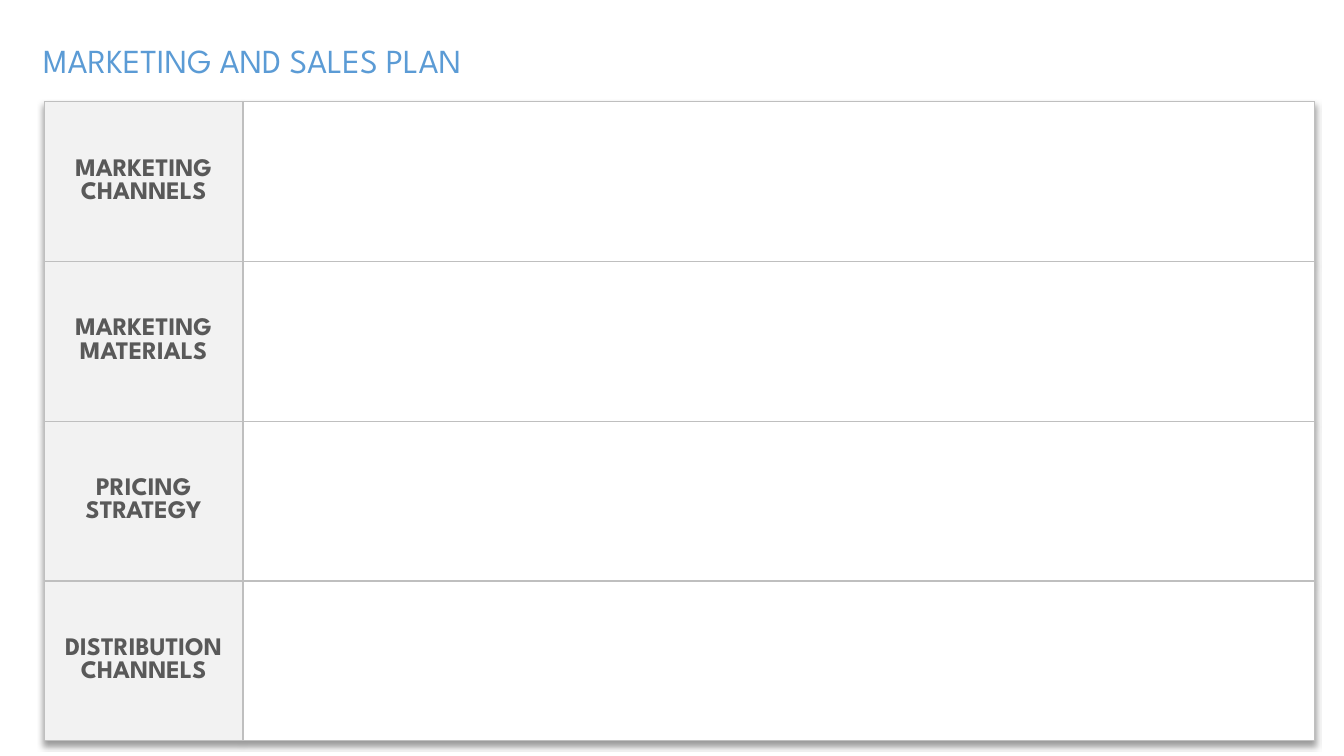
from dataclasses import dataclass

from pptx import Presentation
from pptx.dml.color import RGBColor as RGB
from pptx.enum.text import MSO_ANCHOR as Anchor, PP_ALIGN as Align
from pptx.oxml import parse_xml
from pptx.oxml.ns import nsdecls
from pptx.slide import Slide
from pptx.table import _Cell as Cell
from pptx.text.text import _Paragraph as Paragraph
from pptx.util import Inches, Pt


@dataclass(frozen=True)
class Theme:
    """Colours, font and sizes of the slide."""
    font: str = "League Spartan"
    title: str = "5B9BD5"
    label: str = "595959"
    label_fill: str = "F2F2F2"
    body_fill: str = "FFFFFF"
    border: str = "BFBFBF"
    title_size: int = 24
    label_size: int = 18
    border_width: int = 1


@dataclass(frozen=True)
class PlanRow:
    """One row of the plan."""
    label: str
    detail: str = ""


THEME = Theme()
ROWS = [
    PlanRow("MARKETING CHANNELS"),
    PlanRow("MARKETING MATERIALS"),
    PlanRow("PRICING STRATEGY"),
    PlanRow("DISTRIBUTION CHANNELS"),
]
LABEL_WIDTH, DETAIL_WIDTH, TABLE_HEIGHT = 1.97, 10.63, 6.34


def style_text(p: Paragraph, size: int, color: str, bold: bool = False) -> None:
    """Format every run of a paragraph."""
    for r in p.runs:
        r.font.name = THEME.font
        r.font.size = Pt(size)
        r.font.bold = bold
        r.font.color.rgb = RGB.from_string(color)


def add_title(s: Slide, text: str) -> None:
    """Add the slide title."""
    tf = s.shapes.add_textbox(Inches(0.33), Inches(0.35), Inches(8.08), Inches(0.5)).text_frame
    tf.word_wrap = True
    tf.text = text
    style_text(tf.paragraphs[0], THEME.title_size, THEME.title)


def style_cell(cell: Cell, fill: str) -> None:
    """Fill a cell and outline its four sides."""
    cell.fill.solid()
    cell.fill.fore_color.rgb = RGB.from_string(fill)
    cell.vertical_anchor = Anchor.MIDDLE
    tc_pr = cell._tc.get_or_add_tcPr()
    for i, side in enumerate(("lnL", "lnR", "lnT", "lnB")):
        tc_pr.insert(i, parse_xml(
            f'<a:{side} {nsdecls("a")} w="{Pt(THEME.border_width)}"><a:solidFill>'
            f'<a:srgbClr val="{THEME.border}"/></a:solidFill></a:{side}>'))


def add_plan_table(s: Slide, rows: list[PlanRow]) -> None:
    """Add the plan table with its drop shadow."""
    table = s.shapes.add_table(
        len(rows), 2, Inches(0.44), Inches(1.01),
        Inches(LABEL_WIDTH + DETAIL_WIDTH), Inches(TABLE_HEIGHT)).table
    table.first_row = table.horz_banding = False
    table._tbl.tblPr.insert(0, parse_xml(
        f'<a:effectLst {nsdecls("a")}><a:outerShdw blurRad="50800" dist="38100" '
        'dir="5400000" algn="t" rotWithShape="0"><a:srgbClr val="000000">'
        '<a:alpha val="40000"/></a:srgbClr></a:outerShdw></a:effectLst>'))
    for column, width in zip(table.columns, (LABEL_WIDTH, DETAIL_WIDTH)):
        column.width = Inches(width)
    for i, row in enumerate(rows):
        label, detail = table.cell(i, 0), table.cell(i, 1)
        label.text_frame.text = row.label
        detail.text_frame.text = row.detail
        p = label.text_frame.paragraphs[0]
        p.alignment = Align.CENTER
        style_text(p, THEME.label_size, THEME.label, bold=True)
        style_cell(label, THEME.label_fill)
        style_cell(detail, THEME.body_fill)


def main() -> None:
    """Build and save the slide."""
    prs = Presentation()
    prs.slide_width, prs.slide_height = Inches(13.33), Inches(7.5)
    s = prs.slides.add_slide(prs.slide_layouts[6])
    add_title(s, "MARKETING AND SALES PLAN")
    add_plan_table(s, ROWS)
    prs.save("out.pptx")


if __name__ == "__main__":
    main()
